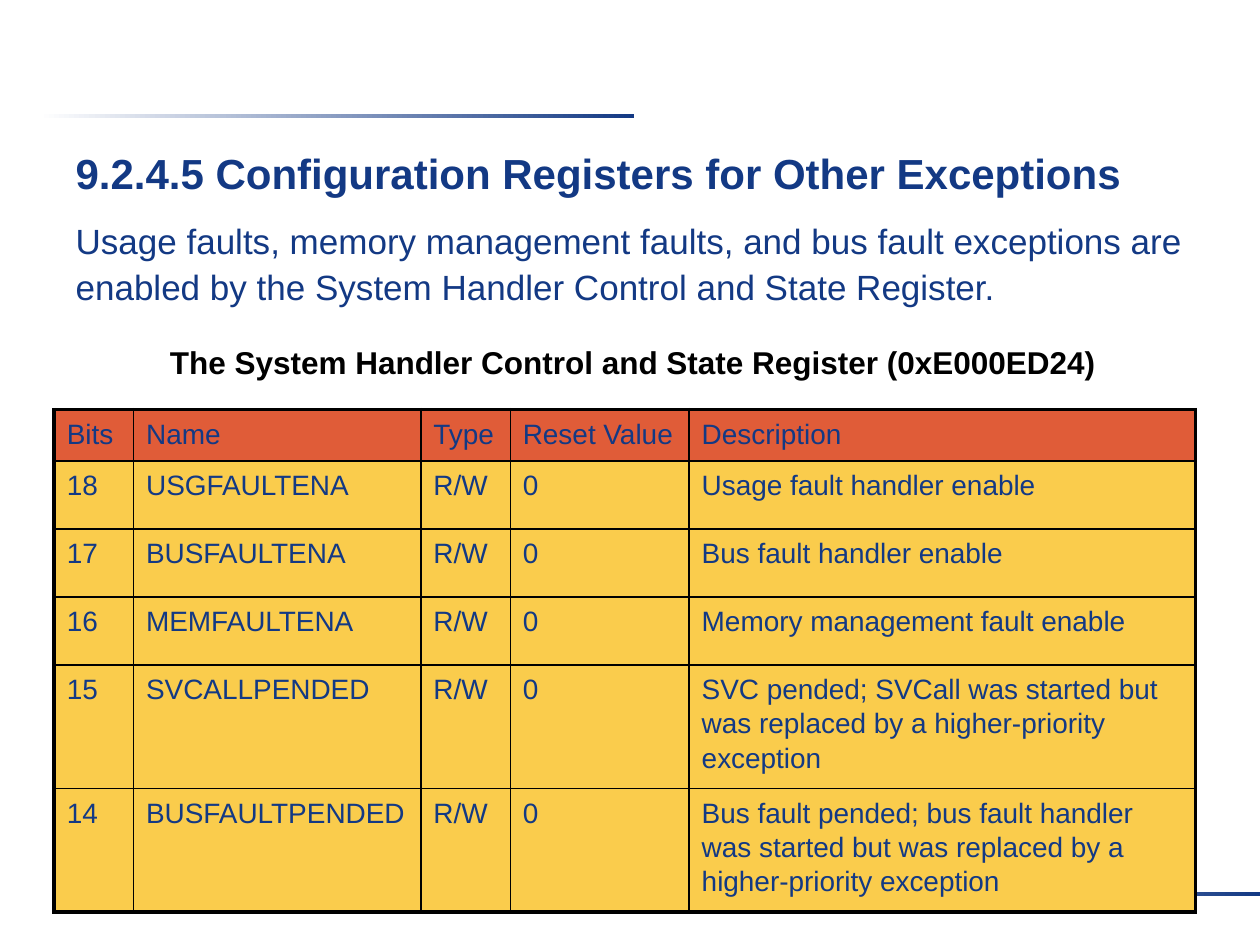
from typing import NamedTuple

from lxml.etree import SubElement
from pptx import Presentation
from pptx.dml.color import RGBColor
from pptx.enum.shapes import MSO_SHAPE as Preset
from pptx.enum.text import MSO_ANCHOR as Anchor, MSO_AUTO_SIZE as AutoSize
from pptx.oxml.ns import qn
from pptx.util import Inches, Pt

NAVY = RGBColor(0x13, 0x39, 0x84)
WHITE = RGBColor(0xFF, 0xFF, 0xFF)
BLACK = RGBColor(0, 0, 0)
RED = RGBColor(0xE0, 0x5C, 0x38)
YELLOW = RGBColor(0xFA, 0xCC, 0x4C)

WIDTH, HEIGHT = Inches(10), Inches(7.5)
LINE_SPACING = 1.1
OUTER_BORDER, INNER_BORDER = Pt(2.25), Pt(1)


class Register(NamedTuple):
    bits: str
    name: str
    type: str
    reset: str
    description: str


class Rule(NamedTuple):
    left: float  # shares of the slide's width and height
    top: float


RULES = [Rule(0.031, 0.121), Rule(0.528, 0.944)]
HEADER = Register("Bits", "Name", "Type", "Reset Value", "Description")
REGISTERS = [
    Register("18", "USGFAULTENA", "R/W", "0", "Usage fault handler enable"),
    Register("17", "BUSFAULTENA", "R/W", "0", "Bus fault handler enable"),
    Register("16", "MEMFAULTENA", "R/W", "0", "Memory management fault enable"),
    Register("15", "SVCALLPENDED", "R/W", "0",
             "SVC pended; SVCall was started but was replaced by a higher-priority exception"),
    Register("14", "BUSFAULTPENDED", "R/W", "0",
             "Bus fault pended; bus fault handler was started but was replaced by a "
             "higher-priority exception"),
]
COLUMN_WIDTHS = [0.63, 2.28, 0.71, 1.42, 4.02]
ROW_HEIGHTS = [0.41] + [0.54] * 3 + [0.98] * 2


def add_run(paragraph, text: str, size: float, color: RGBColor, bold: bool = False) -> None:
    run = paragraph.add_run()
    run.text = text
    font = run.font
    font.name, font.size, font.bold = "Arial", Pt(size), bold
    font.color.rgb = color


def draw_rule(slide, rule: Rule) -> None:
    shape = slide.shapes.add_shape(Preset.RECTANGLE, int(WIDTH * rule.left),
                                   int(HEIGHT * rule.top), int(WIDTH * 0.472), Inches(0.03))
    shape.shadow.inherit = False
    shape.line.fill.background()
    shape.fill.gradient()
    shape.fill.gradient_angle = 0
    for stop, color in zip(shape.fill.gradient_stops, (WHITE, NAVY)):
        stop.color.rgb = color


def fill_body(body) -> None:
    body.left, body.top, body.width, body.height = map(Inches, (0.5, 1.08, 9, 1.33))
    frame = body.text_frame
    frame.vertical_anchor = Anchor.TOP
    frame.auto_size = AutoSize.NONE
    heading, text = frame.paragraphs[0], frame.add_paragraph()
    for paragraph, before in ((heading, 0), (text, 10)):
        properties = paragraph._p.get_or_add_pPr()
        properties.set("marL", "0")
        properties.set("indent", "0")
        SubElement(properties, qn("a:buNone"))
        paragraph.line_spacing = LINE_SPACING
        paragraph.space_before = Pt(before)
    add_run(heading, "9.2.4.5 Configuration Registers for Other Exceptions", 24, NAVY, True)
    add_run(text, "Usage faults, memory management faults, and bus fault exceptions are "
                  "enabled by the System Handler Control and State Register.", 20, NAVY)


def draw_caption(slide) -> None:
    box = slide.shapes.add_textbox(*map(Inches, (1.25, 2.67, 7.55, 0.4)))
    box.text_frame.word_wrap = False
    box.text_frame.auto_size = AutoSize.SHAPE_TO_FIT_TEXT
    add_run(box.text_frame.paragraphs[0],
            "The System Handler Control and State Register (0xE000ED24)", 18, BLACK, True)


def set_borders(cell, outer_sides: dict[str, bool]) -> None:
    properties = cell._tc.get_or_add_tcPr()
    for position, (side, is_outer) in enumerate(outer_sides.items()):
        width = OUTER_BORDER if is_outer else INNER_BORDER
        line = properties.makeelement(qn(f"a:{side}"), {"w": str(width)})
        SubElement(SubElement(line, qn("a:solidFill")), qn("a:srgbClr"), val=str(BLACK))
        properties.insert(position, line)


def draw_table(slide) -> None:
    rows = [HEADER, *REGISTERS]
    last_row, last_column = len(rows) - 1, len(HEADER) - 1
    table = slide.shapes.add_table(len(rows), len(HEADER), Inches(0.43), Inches(3.25),
                                   Inches(sum(COLUMN_WIDTHS)), Inches(sum(ROW_HEIGHTS))).table
    for column, width in zip(table.columns, COLUMN_WIDTHS):
        column.width = Inches(width)
    for row, height in zip(table.rows, ROW_HEIGHTS):
        row.height = Inches(height)
    for r, register in enumerate(rows):
        for c, text in enumerate(register):
            cell = table.cell(r, c)
            cell.fill.solid()
            cell.fill.fore_color.rgb = YELLOW if r else RED
            set_borders(cell, {"lnL": c == 0, "lnR": c == last_column,
                               "lnT": r == 0, "lnB": r == last_row})
            paragraph = cell.text_frame.paragraphs[0]
            paragraph.line_spacing = LINE_SPACING
            add_run(paragraph, text, 16, NAVY)


def main() -> None:
    presentation = Presentation()
    presentation.slide_width, presentation.slide_height = WIDTH, HEIGHT
    slide = presentation.slides.add_slide(presentation.slide_layouts[1])

    # The heading shares the body placeholder, so the title is not needed
    title = slide.shapes.title._element
    title.getparent().remove(title)
    fill_body(slide.placeholders[1])

    # Fading rules, caption and register table
    for rule in RULES:
        draw_rule(slide, rule)
    draw_caption(slide)
    draw_table(slide)

    presentation.save("out.pptx")


if __name__ == "__main__":
    main()
